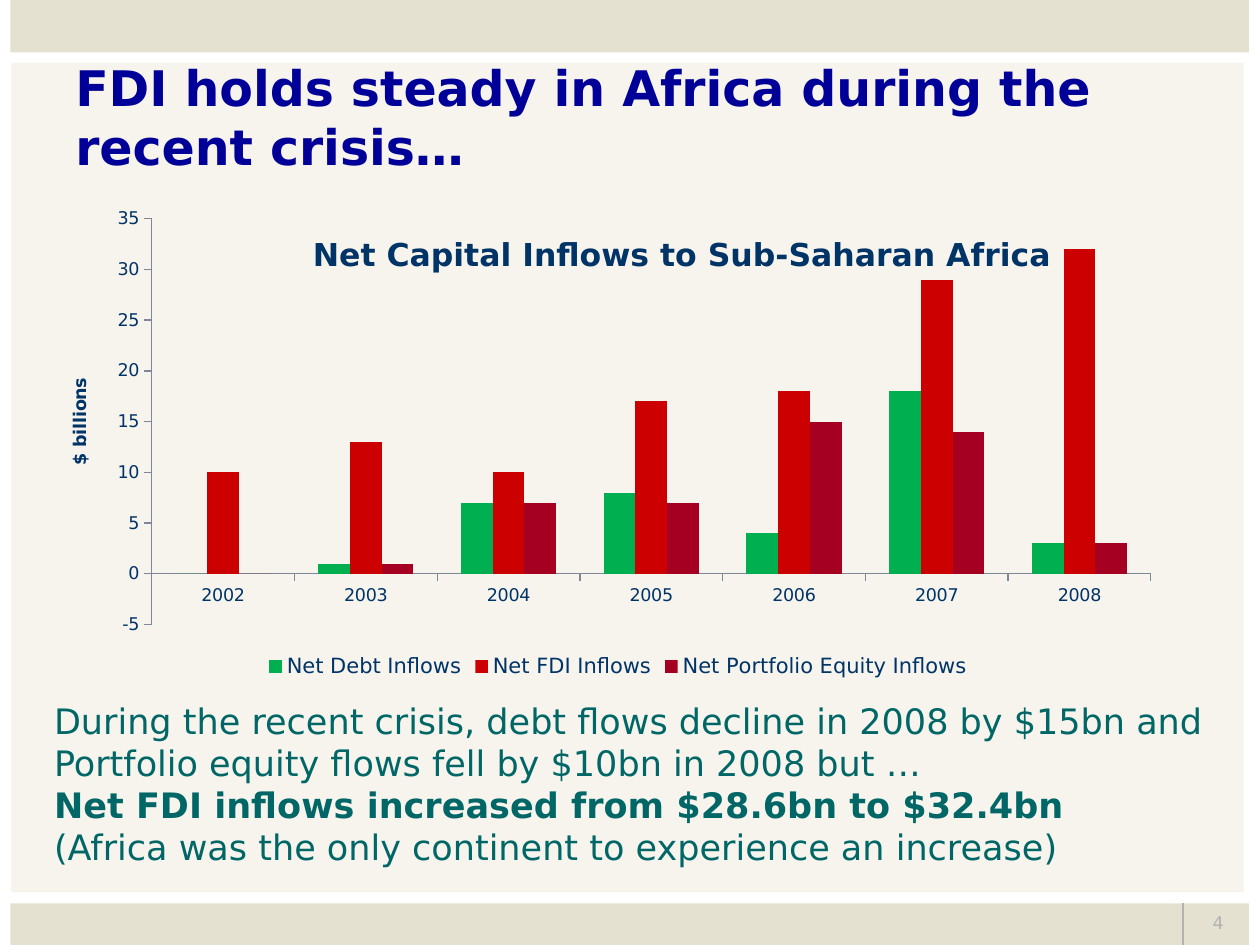
from pptx import Presentation
from pptx.chart.data import CategoryChartData as ChartData
from pptx.dml.color import RGBColor as Rgb
from pptx.enum.chart import XL_CHART_TYPE as Chart, XL_LEGEND_POSITION as Legend
from pptx.enum.shapes import MSO_CONNECTOR as Link, MSO_SHAPE as Shape
from pptx.enum.text import MSO_ANCHOR as Anchor, PP_ALIGN as Align
from pptx.oxml import parse_xml
from pptx.oxml.ns import nsdecls, qn
from pptx.util import Cm, Pt

FONT = "DejaVu Sans"
COLORS = {
    "band": "E5E1D1", "panel": "F7F4EE", "rule": "B2B2B2",
    "title": "000099", "body": "006666", "chart": "003366", "axis": "7F8799",
    "debt": "00B050", "fdi": "CC0000", "equity": "A50021",
}
YEARS = [str(year) for year in range(2002, 2009)]
FLOWS = [
    ("Net Debt Inflows", "debt", (0, 1, 7, 8, 4, 18, 3)),
    ("Net FDI Inflows", "fdi", (10, 13, 10, 17, 18, 29, 32)),
    ("Net Portfolio Equity Inflows", "equity", (0, 1, 7, 7, 15, 14, 3)),
]
BODY = [
    ("During the recent crisis, debt flows decline in 2008 by $15bn and "
     "Portfolio equity flows fell by $10bn in 2008 but …", False),
    ("Net FDI inflows increased from $28.6bn to $32.4bn", True),
    ("(Africa was the only continent to experience an increase)", False),
]


def color(key):
    return Rgb.from_string(COLORS[key])


def style(font, size, key, bold=False):
    font.name, font.size, font.bold = FONT, Pt(size), bold
    font.color.rgb = color(key)


def add_box(slide, key, left, top, width, height):
    box = slide.shapes.add_shape(Shape.RECTANGLE, Cm(left), Cm(top), Cm(width), Cm(height))
    box.shadow.inherit = False
    box.fill.solid()
    box.fill.fore_color.rgb = color(key)
    box.line.fill.background()


def add_rule(slide, x, top, bottom):
    rule = slide.shapes.add_connector(Link.STRAIGHT, Cm(x), Cm(top), Cm(x), Cm(bottom))
    rule.line.color.rgb = color("rule")
    rule.line.width = Pt(0.75)
    props = rule._element.spPr
    props.append(parse_xml(f"<a:effectLst {nsdecls('a')}/>"))


def add_text(slide, lines, size, key, place, anchor=Anchor.TOP, align=Align.LEFT):
    frame = slide.shapes.add_textbox(*map(Cm, place)).text_frame
    frame.word_wrap = True
    frame.vertical_anchor = anchor
    frame.text = "\n".join(text for text, _ in lines)
    for para, (_, bold) in zip(frame.paragraphs, lines):
        para.alignment = align
        style(para.runs[0].font, size, key, bold)


def set_title(owner, text, size):
    frame = owner.text_frame
    frame.text = text
    style(frame.paragraphs[0].runs[0].font, size, "chart", True)


def set_layout(parent, index, **parts):
    """Place a chart part by fractions of the chart area."""
    for old in parent.findall(qn("c:layout")):
        parent.remove(old)
    tags = "".join(f'<c:{tag} val="{val}"/>' for tag, val in parts.items())
    parent.insert(index, parse_xml(
        f"<c:layout {nsdecls('c')}><c:manualLayout>{tags}</c:manualLayout></c:layout>"))


def set_axis(axis):
    axis.has_major_gridlines = False
    axis.format.line.color.rgb = color("axis")
    axis.format.line.width = Pt(0.75)
    style(axis.tick_labels.font, 10, "chart")


def add_chart(slide, left, top, width, height):
    data = ChartData(number_format="General")
    data.categories = YEARS
    for name, _, vals in FLOWS:
        data.add_series(name, vals)
    chart = slide.shapes.add_chart(
        Chart.COLUMN_CLUSTERED, Cm(left), Cm(top), Cm(width), Cm(height), data).chart
    style(chart.font, 10, "chart")

    # Columns
    plot = chart.plots[0]
    plot.vary_by_categories = False
    plot.gap_width, plot.overlap = 150, 0
    for series, (_, key, _) in zip(plot.series, FLOWS):
        series.invert_if_negative = False
        series.format.fill.solid()
        series.format.fill.fore_color.rgb = color(key)

    # Axes
    set_axis(chart.category_axis)
    scale = chart.value_axis
    set_axis(scale)
    scale.minimum_scale, scale.maximum_scale, scale.major_unit = -5, 35, 5
    set_title(scale.axis_title, "$ billions", 10)

    # Title and legend
    set_title(chart.chart_title, "Net Capital Inflows to Sub-Saharan Africa", 18)
    chart.chart_title.include_in_layout = True
    chart.has_legend = True
    chart.legend.position = Legend.BOTTOM
    chart.legend.include_in_layout = False
    style(chart.legend.font, 12, "chart")

    # Places inside the chart area
    area = chart.element.find(qn("c:chart"))
    set_layout(area.find(qn("c:title")), 1, xMode="edge", yMode="edge", x=0.22, y=0.08)
    set_layout(area.find(qn("c:plotArea")), 0, layoutTarget="inner",
               xMode="edge", yMode="edge", x=0.08, y=0.06, w=0.9, h=0.82)


def main():
    deck = Presentation()
    deck.slide_width, deck.slide_height = Cm(25.4), Cm(19.05)
    slide = deck.slides.add_slide(deck.slide_layouts[6])

    # Backdrop
    add_box(slide, "band", 0.21, 18.21, 24.97, 0.84)
    add_box(slide, "panel", 0.23, 1.27, 24.84, 16.72)
    add_rule(slide, 23.85, 18.21, 19.05)
    add_box(slide, "band", 0.21, 0, 24.97, 1.06)

    # Heading and page number
    add_text(slide, [("FDI holds steady in Africa during the recent crisis…", True)],
             28, "title", (1.27, 1.28, 23.06, 2.13), anchor=Anchor.MIDDLE)
    add_text(slide, [("4", False)], 10, "rule", (19.69, 18.27, 5.23, 0.79),
             align=Align.RIGHT)

    # Chart and message
    add_chart(slide, 1.27, 3.81, 22.38, 9.98)
    add_text(slide, BODY, 20, "body", (0.84, 13.97, 23.7, 3.68))

    deck.save("out.pptx")


if __name__ == "__main__":
    main()
